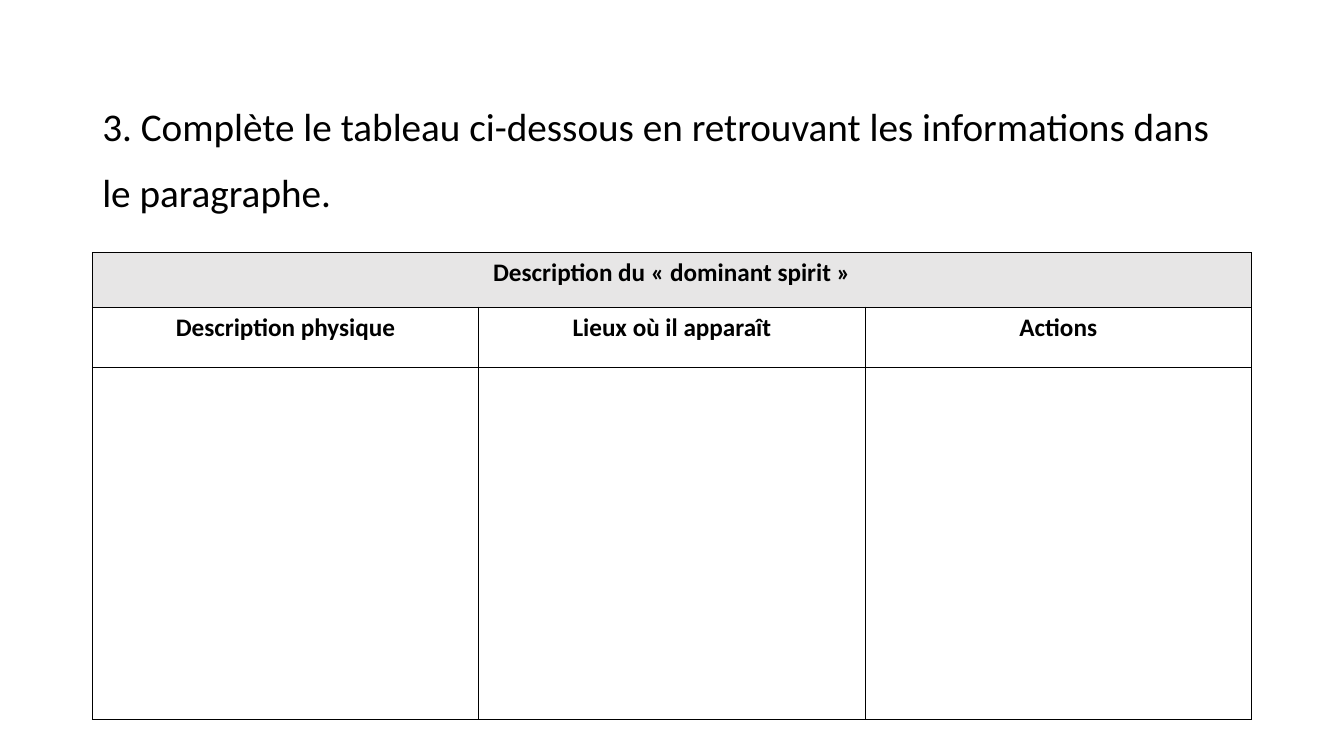
from dataclasses import dataclass

from lxml import etree
from pptx import Presentation
from pptx import util as u
from pptx.dml.color import RGBColor
from pptx.enum import text as t
from pptx.oxml import ns


@dataclass(frozen=True)
class Theme:
    font: str = "Calibri"
    ink: str = "000000"
    head: str = "E7E6E6"
    task: int = 28
    label: int = 18
    rule: int = 1


def write(frame, words, theme, size, bold=False, align=t.PP_ALIGN.LEFT,
          lead=1.0, before=0):
    para = frame.paragraphs[0]
    para.alignment = align
    para.line_spacing = lead
    para.space_before = u.Pt(before)
    run = para.add_run()
    run.text = words
    font = run.font
    font.name, font.size, font.bold = theme.font, u.Pt(size), bold
    font.color.rgb = RGBColor.from_string(theme.ink)


class Page:
    def __init__(self, slide, theme):
        self.slide = slide
        self.theme = theme

    def text(self, words, left, top, width, height, **style):
        box = self.slide.shapes.add_textbox(
            u.Pt(left), u.Pt(top), u.Pt(width), u.Pt(height))
        box.text_frame.word_wrap = True
        write(box.text_frame, words, self.theme, **style)

    def edge(self, cell):
        """Draw a thin rule on all four sides of a cell."""
        props = cell._tc.get_or_add_tcPr()
        for spot, side in enumerate(("lnL", "lnR", "lnT", "lnB")):
            line = etree.Element(ns.qn("a:" + side),
                                 w=str(u.Pt(self.theme.rule)))
            fill = etree.SubElement(line, ns.qn("a:solidFill"))
            etree.SubElement(fill, ns.qn("a:srgbClr"), val=self.theme.ink)
            props.insert(spot, line)

    def table(self, title, heads, left, top, width, rows):
        """Build a grid with a merged title row, a heading row and blank rows."""
        count = len(heads)
        grid = self.slide.shapes.add_table(
            len(rows), count, u.Pt(left), u.Pt(top),
            u.Pt(width), u.Pt(sum(rows))).table
        grid.first_row = grid.horz_banding = False
        for col in grid.columns:
            col.width = u.Pt(width / count)
        for row, height in zip(grid.rows, rows):
            row.height = u.Pt(height)
        for cell in grid.iter_cells():
            cell.fill.background()
            self.edge(cell)
        first = grid.cell(0, 0)
        first.merge(grid.cell(0, count - 1))
        first.fill.solid()
        first.fill.fore_color.rgb = RGBColor.from_string(self.theme.head)
        labels = [(first, title)]
        labels += [(grid.cell(1, i), head) for i, head in enumerate(heads)]
        for cell, words in labels:
            write(cell.text_frame, words, self.theme, self.theme.label,
                  bold=True, align=t.PP_ALIGN.CENTER)


def main():
    deck = Presentation()
    deck.slide_width, deck.slide_height = u.Pt(960), u.Pt(540)
    theme = Theme()
    page = Page(deck.slides.add_slide(deck.slide_layouts[6]), theme)
    left, width = 66, 828
    page.text("3. Complète le tableau ci-dessous en retrouvant les "
              "informations dans le paragraphe.",
              left, 56, width, 104.5, size=theme.task, lead=1.4, before=10)
    page.table("Description du « dominant spirit »",
               ["Description physique", "Lieux où il apparaît", "Actions"],
               left, 180.5, width, [39, 43, 251.5])
    deck.save("out.pptx")


if __name__ == "__main__":
    main()
